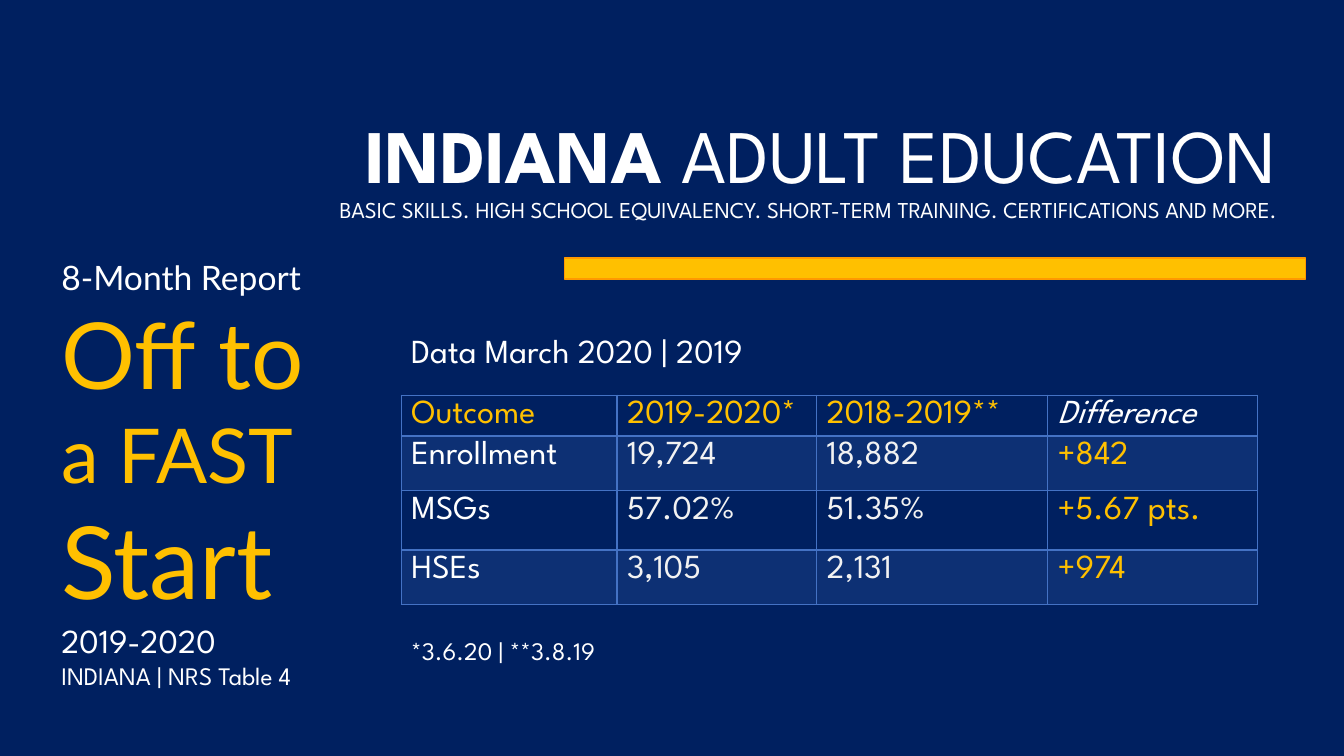
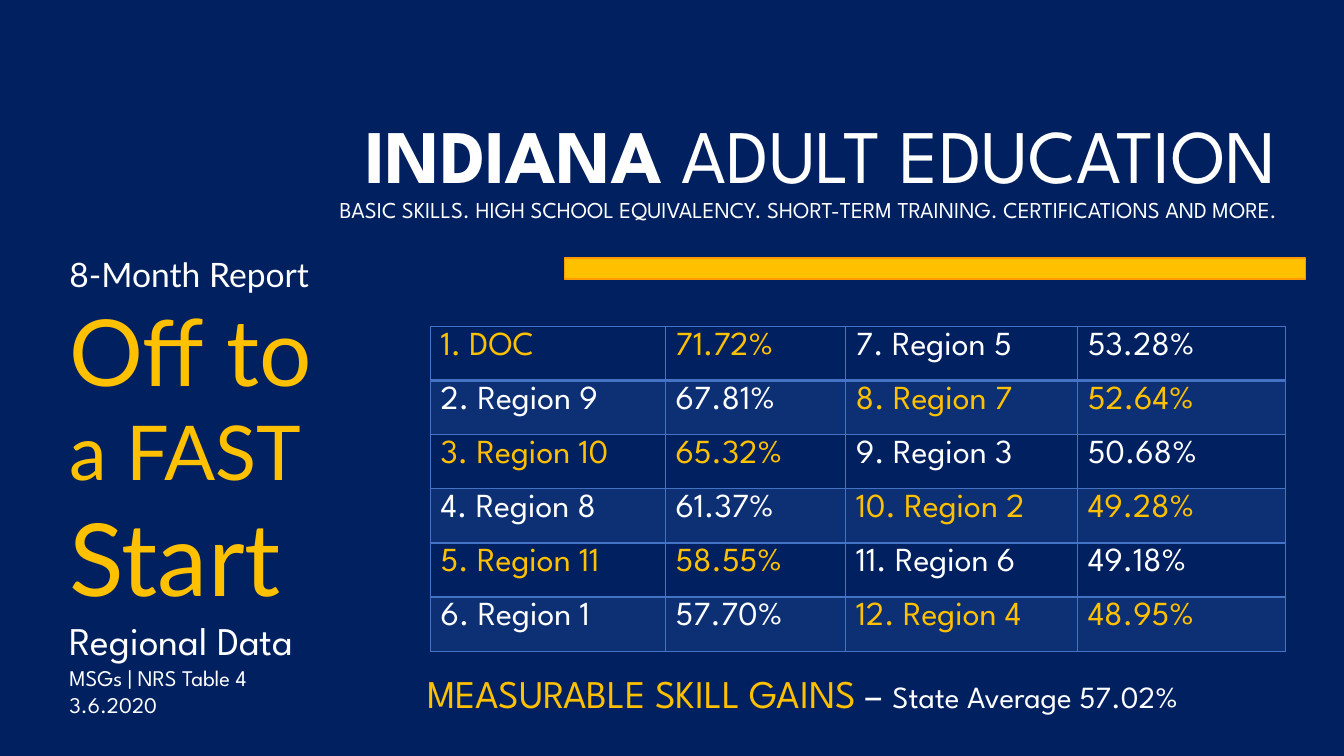
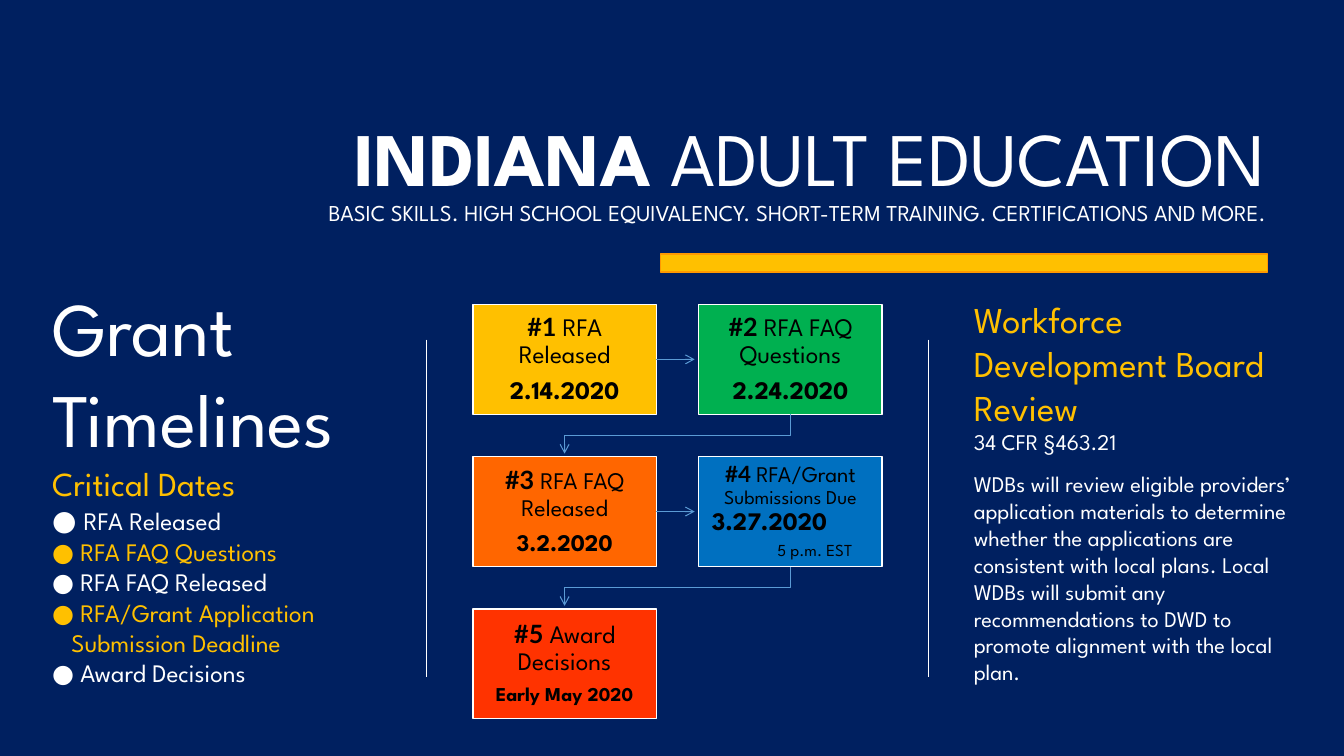
from dataclasses import dataclass
from itertools import pairwise
from typing import Optional

from lxml import etree
from pptx import Presentation
from pptx import util as u
from pptx.dml.color import RGBColor
from pptx.enum import shapes, text
from pptx.oxml.ns import qn

# Shared look
NAVY = RGBColor(0x00, 0x20, 0x60)
WHITE = RGBColor(0xFF, 0xFF, 0xFF)
BLACK = RGBColor(0x00, 0x00, 0x00)
GOLD = RGBColor(0xFF, 0xC0, 0x00)
ORANGE_EDGE = RGBColor(0xFF, 0x99, 0x00)
GRID_BLUE = RGBColor(0x44, 0x72, 0xC4)
ARROW_BLUE = RGBColor(0x5B, 0x9B, 0xD5)
PALE = RGBColor(0xF2, 0xF2, 0xF2)
GREEN = RGBColor(0x00, 0xB0, 0x50)
ORANGE = RGBColor(0xFF, 0x66, 0x00)
BLUE = RGBColor(0x00, 0x70, 0xC0)
RED = RGBColor(0xFF, 0x33, 0x00)
SPARTAN, LATO = "League Spartan", "Lato"
LEADING, TIGHT, CELL_LEADING = 1.2, 1.08, 0.92
LEFT, RIGHT, CENTER = text.PP_ALIGN.LEFT, text.PP_ALIGN.RIGHT, text.PP_ALIGN.CENTER

Box = tuple[float, float, float, float]


@dataclass
class Run:
    text: str
    size: float
    color: RGBColor = WHITE
    font: str = SPARTAN
    bold: bool = False
    italic: bool = False


@dataclass
class Para:
    runs: list[Run]
    leading: Optional[float] = LEADING  # line pitch as a share of the type size
    align: Optional[text.PP_ALIGN] = None
    before: float = 0
    left: float = 0


@dataclass
class Card:
    column: int
    row: int
    color: RGBColor
    paras: list[Para]


def line(content: str, size: float, color: RGBColor = WHITE, **options) -> Para:
    return Para([Run(content, size, color)], **options)


def natural(*runs: Run) -> Para:
    return Para(list(runs), leading=None)


# Text
def fill_text(frame, paras: list[Para]) -> None:
    frame.word_wrap = True
    for index, para in enumerate(paras):
        paragraph = frame.paragraphs[0] if index == 0 else frame.add_paragraph()
        if para.left:
            paragraph._p.get_or_add_pPr().set("marL", str(u.Inches(para.left)))
        if para.align is not None:
            paragraph.alignment = para.align
        if para.leading:
            size = max(run.size for run in para.runs)
            paragraph.line_spacing = u.Pt(round(size * para.leading, 1))
        if para.before:
            paragraph.space_before = u.Pt(para.before)
        for item in para.runs:
            run = paragraph.add_run()
            run.text = item.text
            font = run.font
            font.name, font.size = item.font, u.Pt(item.size)
            font.bold, font.italic = item.bold, item.italic
            font.color.rgb = item.color


def add_text(slide, box: Box, paras: list[Para]) -> None:
    shape = slide.shapes.add_textbox(*map(u.Inches, box))
    fill_text(shape.text_frame, paras)


# Shapes and lines
def add_box(slide, box: Box, fill: RGBColor, edge: RGBColor):
    shape = slide.shapes.add_shape(shapes.MSO_SHAPE.RECTANGLE, *map(u.Inches, box))
    shape.shadow.inherit = False
    shape.fill.solid()
    shape.fill.fore_color.rgb = fill
    shape.line.color.rgb = edge
    shape.line.width = u.Pt(1)
    return shape


def add_path(slide, points: list[tuple[float, float]], color: RGBColor, arrow: bool = False) -> None:
    """Draw a straight connector for two points, an open outline for more."""
    ends = [(u.Inches(x), u.Inches(y)) for x, y in points]
    if len(ends) == 2:
        shape = slide.shapes.add_connector(shapes.MSO_CONNECTOR.STRAIGHT, *ends[0], *ends[1])
    else:
        builder = slide.shapes.build_freeform(*ends[0])
        builder.add_line_segments(ends[1:], close=False)
        shape = builder.convert_to_shape()
        shape.fill.background()
    shape.line.color.rgb = color
    shape.line.width = u.Pt(0.75)
    properties = shape._element.spPr
    if arrow:
        etree.SubElement(properties.find(qn("a:ln")), qn("a:tailEnd"), type="arrow")
    etree.SubElement(properties, qn("a:effectLst"))


# Tables
def set_borders(cell, row: int) -> None:
    properties = cell._tc.get_or_add_tcPr()
    widths = {"L": 1, "R": 1, "T": 2 if row == 1 else 1, "B": 2 if row == 0 else 1}
    for index, (side, width) in enumerate(widths.items()):
        border = etree.Element(qn(f"a:ln{side}"), w=str(u.Pt(width)))
        fill = etree.SubElement(border, qn("a:solidFill"))
        etree.SubElement(fill, qn("a:srgbClr"), val=str(GRID_BLUE))
        properties.insert(index, border)


def add_grid(slide, left: float, top: float, columns: list[float], rows: list[float],
             cells: list[list[Run]]) -> None:
    frame = slide.shapes.add_table(len(rows), len(columns), *map(
        u.Inches, (left, top, sum(columns), sum(rows))))
    table = frame.table
    table.first_row = table.horz_banding = False
    for column, width in zip(table.columns, columns):
        column.width = u.Inches(width)
    for index, height in enumerate(rows):
        table.rows[index].height = u.Inches(height)
        for column, run in enumerate(cells[index]):
            cell = table.cell(index, column)
            fill_text(cell.text_frame, [Para([run], CELL_LEADING)])
            if index % 2:
                cell.fill.solid()
                cell.fill.fore_color.rgb = GRID_BLUE
                tint = cell._tc.tcPr.find(".//" + qn("a:srgbClr"))
                etree.SubElement(tint, qn("a:alpha"), val="20000")
            else:
                cell.fill.background()
            set_borders(cell, index)


# Parts shared by the slides
def new_slide(presentation, title_at: tuple[float, float], band: Box):
    slide = presentation.slides.add_slide(presentation.slide_layouts[6])
    slide.background.fill.solid()
    slide.background.fill.fore_color.rgb = NAVY
    add_text(slide, (*title_at, 10.99, 1.41), [
        Para([Run("INDIANA", 54, bold=True), Run(" ADULT EDUCATION", 54)], TIGHT, RIGHT),
        line("BASIC SKILLS. HIGH SCHOOL EQUIVALENCY. SHORT-TERM TRAINING. "
             "CERTIFICATIONS AND MORE.", 16.2, leading=TIGHT, align=RIGHT)])
    add_box(slide, band, GOLD, ORANGE_EDGE)
    return slide


def report_slide(presentation, panel: Box, closing: list[Para]):
    slide = new_slide(presentation, (1.77, 1.11), (5.6, 2.56, 7.35, 0.21))
    add_text(slide, panel, [
        natural(Run("8-Month Report", 24, WHITE, LATO)),
        natural(Run("Off to", 66, GOLD, LATO)),
        natural(Run("a FAST ", 54, GOLD, LATO), Run("Start", 72, GOLD, LATO)),
        *closing])
    return slide


# Slide 1
def state_slide(presentation) -> None:
    slide = report_slide(presentation, (0.51, 2.5, 3.86, 4.44), [
        line("2019-2020", 24), line("INDIANA | NRS Table 4", 18)])
    outcomes = [
        ("Enrollment", "19,724", "18,882", "+842"),
        ("MSGs", "57.02%", "51.35%", "+5.67 pts."),
        ("HSEs", "3,105", "2,131", "+974")]
    header = [Run(label, 24, GOLD) for label in ("Outcome", "2019-2020*", "2018-2019**")]
    header.append(Run("Difference", 24, italic=True))
    body = [[Run(value, 24, color) for value, color in zip(row, (WHITE, PALE, PALE, GOLD))]
            for row in outcomes]
    add_grid(slide, 3.98, 3.92, [2.14, 1.98, 2.29, 2.08], [0.4, 0.54, 0.59, 0.54],
             [header, *body])
    add_text(slide, (3.98, 6.25, 5.18, 0.4), [line("*3.6.20 | **3.8.19", 18)])
    add_text(slide, (3.98, 3.22, 5.08, 0.5), [line("Data March 2020 | 2019", 24)])


# Slide 2
def regional_slide(presentation) -> None:
    slide = report_slide(presentation, (0.59, 2.47, 3.46, 4.75), [
        line("Regional Data", 28), line("MSGs | NRS Table 4", 16), line("3.6.2020", 16)])
    ranking = [
        ("DOC", "71.72%"), ("Region 9", "67.81%"), ("Region 10", "65.32%"),
        ("Region 8", "61.37%"), ("Region 11", "58.55%"), ("Region 1", "57.70%"),
        ("Region 5", "53.28%"), ("Region 7", "52.64%"), ("Region 3", "50.68%"),
        ("Region 2", "49.28%"), ("Region 6", "49.18%"), ("Region 4", "48.95%")]
    half = len(ranking) // 2
    cells: list[list[Run]] = [[] for _ in range(half)]
    for index, (region, gain) in enumerate(ranking):
        side, row = divmod(index, half)
        color = WHITE if (side + row) % 2 else GOLD
        cells[row] += [Run(f"{index + 1}. {region}", 24, color), Run(gain, 24, color)]
    add_grid(slide, 4.27, 3.24, [2.33, 1.79, 2.3, 2.06], [3.22 / half] * half, cells)
    add_text(slide, (4.14, 6.59, 8.81, 0.57), [Para([
        Run("MEASURABLE SKILL GAINS ", 28, GOLD), Run("– ", 28),
        Run("State Average 57.02%", 22)])])


# Slide 3
CARD_LEFT, CARD_TOP, CARD_WIDTH, CARD_HEIGHT = 4.69, 3.02, 1.82, 1.09
COLUMN_STEP, ROW_STEP = 2.24, 1.51


def card_text(number: int, label: str, date: str, label_size: float = 18,
              date_size: float = 18) -> list[Para]:
    return [
        Para([Run(f"#{number} ", 18, BLACK, LATO, True), Run(label, label_size, BLACK)],
             TIGHT, CENTER),
        Para([Run(date, date_size, BLACK, bold=True)], TIGHT, CENTER, before=6.3)]


def card_corner(card: Card) -> tuple[float, float]:
    return CARD_LEFT + card.column * COLUMN_STEP, CARD_TOP + card.row * ROW_STEP


def add_card(slide, card: Card) -> None:
    shape = add_box(slide, (*card_corner(card), CARD_WIDTH, CARD_HEIGHT), card.color, WHITE)
    frame = shape.text_frame
    frame.margin_left = frame.margin_right = u.Inches(0.13)
    frame.margin_top = frame.margin_bottom = u.Inches(0.05)
    frame.vertical_anchor = text.MSO_ANCHOR.MIDDLE
    fill_text(frame, card.paras)


def add_step_arrow(slide, start: Card, end: Card) -> None:
    (x1, y1), (x2, y2) = card_corner(start), card_corner(end)
    if start.row == end.row:
        middle = y1 + CARD_HEIGHT / 2
        points = [(x1 + CARD_WIDTH, middle), (x2 - 0.04, middle)]
    else:
        x1, x2 = x1 + CARD_WIDTH / 2, x2 + CARD_WIDTH / 2
        bottom = y1 + CARD_HEIGHT
        turn = (bottom + y2) / 2
        points = [(x1, bottom), (x1, turn), (x2, turn), (x2, y2 - 0.03)]
    add_path(slide, points, ARROW_BLUE, arrow=True)


def timeline_slide(presentation) -> None:
    slide = new_slide(presentation, (1.66, 1.14), (6.55, 2.52, 6.02, 0.18))
    for x in (4.23, 9.21):
        add_path(slide, [(x, 3.37), (x, 6.72)], WHITE)

    # Critical dates
    dates = [("RFA Released", WHITE, 20), ("RFA FAQ Questions", GOLD, 18),
             ("RFA FAQ Released", WHITE, 18), ("RFA/Grant Application", GOLD, 18),
             ("Award Decisions", WHITE, 18)]
    items = [Para([Run("● ", dot_size, color), Run(label, 18, color)])
             for label, color, dot_size in dates]
    items.insert(4, line("Submission Deadline", 18, GOLD, left=0.19))
    add_text(slide, (0.42, 2.74, 3.63, 4.17), [
        line("Grant Timelines", 54), line("Critical Dates", 24, GOLD), *items])

    # Steps
    submission = [
        Para([Run("#4 ", 16, BLACK, LATO, True), Run("RFA/Grant", 16, BLACK)], TIGHT, CENTER),
        line("Submissions Due", 14, BLACK, leading=TIGHT, align=CENTER),
        Para([Run("3.27.2020", 18, BLACK, bold=True)], TIGHT, LEFT),
        line("5 p.m. EST", 12, BLACK, leading=1.44, align=LEFT, left=0.65)]
    cards = [
        Card(0, 0, GOLD, card_text(1, "RFA Released", "2.14.2020")),
        Card(1, 0, GREEN, card_text(2, "RFA FAQ Questions", "2.24.2020")),
        Card(0, 1, ORANGE, card_text(3, "RFA FAQ Released", "3.2.2020", 17, 17)),
        Card(1, 1, BLUE, submission),
        Card(0, 2, RED, card_text(5, "Award Decisions", "Early May 2020", date_size=14))]
    for card in cards:
        add_card(slide, card)
    for start, end in pairwise(cards):
        add_step_arrow(slide, start, end)

    # Board review
    add_text(slide, (9.56, 2.9, 3.48, 4.3), [
        line("Workforce Development Board Review", 26, GOLD),
        line("34 CFR §463.21", 16),
        line("WDBs will review eligible providers’ application materials to determine whether "
             "the applications are consistent with local plans. Local WDBs will submit any "
             "recommendations to DWD to promote alignment with the local plan.", 16,
             before=10.8)])


def main() -> None:
    presentation = Presentation()
    presentation.slide_width, presentation.slide_height = u.Inches(13.33), u.Inches(7.5)
    state_slide(presentation)
    regional_slide(presentation)
    timeline_slide(presentation)
    presentation.save("out.pptx")


if __name__ == "__main__":
    main()
